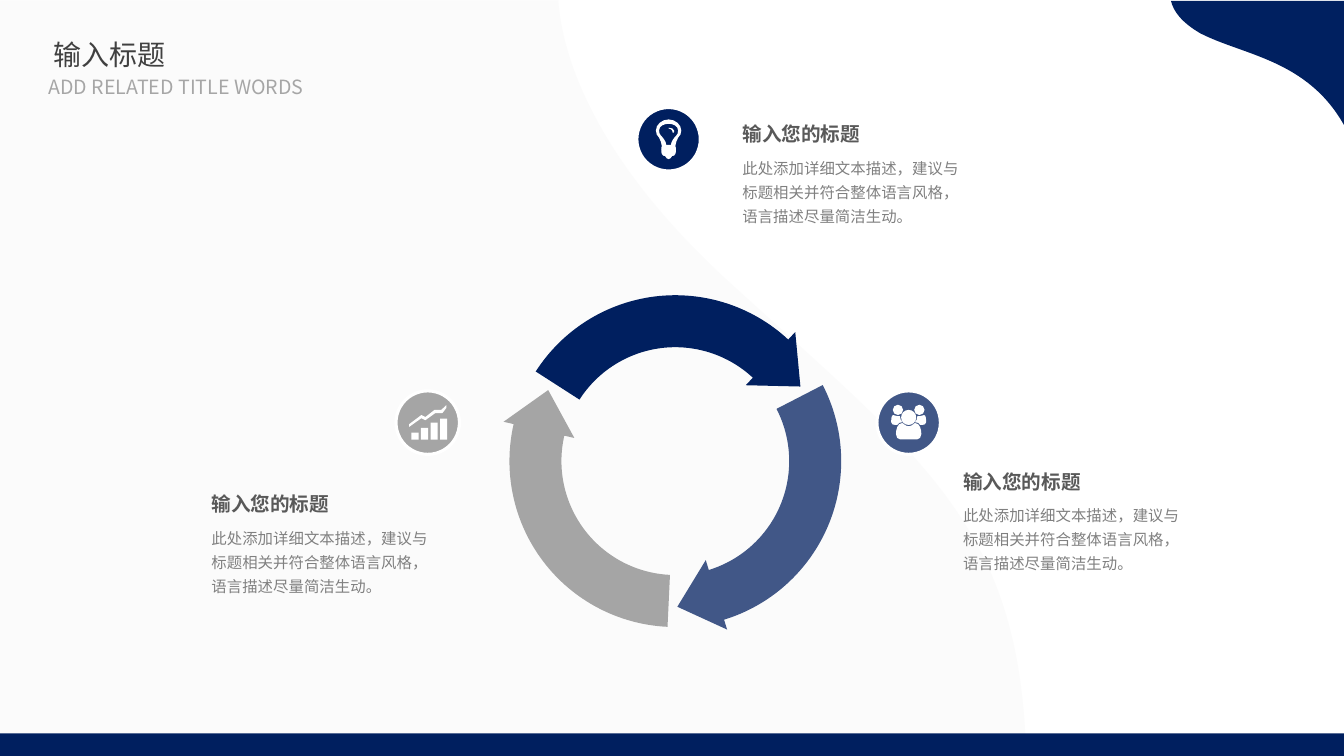
from math import cos, radians, sin, tan

from lxml import etree
from pptx import Presentation
from pptx.dml.color import RGBColor
from pptx.enum.shapes import MSO_SHAPE
from pptx.enum.text import MSO_AUTO_SIZE, PP_ALIGN
from pptx.oxml.ns import qn
from pptx.util import Cm, Pt

RECT, OVAL = MSO_SHAPE.RECTANGLE, MSO_SHAPE.OVAL
FIT, JUSTIFY, LEFT = MSO_AUTO_SIZE.SHAPE_TO_FIT_TEXT, PP_ALIGN.JUSTIFY, PP_ALIGN.LEFT

# Content (lengths in cm)
TITLE = "输入标题"
SUBTITLE = "ADD RELATED TITLE WORDS"
HEADING = "输入您的标题"
BODY = "此处添加详细文本描述，建议与标题相关并符合整体语言风格，语言描述尽量简洁生动。"
ITEMS = [
    {"color": "navy", "badge": (16.05, 2.71), "text": (18.46, 2.95)},
    {"color": "blue", "badge": (22.10, 9.85), "text": (24.02, 11.71)},
    {"color": "gray", "badge": (9.98, 9.85), "text": (5.08, 12.27)},
]

THEME = {
    "font": "Noto Sans CJK SC",
    "navy": "001F5F", "blue": "415787", "gray": "A5A5A5",
    "corner": "002060", "wave": "F2F2F2", "white": "FFFFFF",
    "title": {"size": 20, "color": "404040", "bold": False},
    "subtitle": {"size": 14, "color": "A6A6A6", "bold": False},
    "heading": {"size": 14, "color": "595959", "bold": True},
    "body": {"size": 11, "color": "808080", "bold": False},
}

# Geometry
W, H = 33.87, 19.05
RING = {"center": (17.02, 11.62), "outer": 4.18, "inner": 2.87,
        "barb_out": 4.44, "barb_in": 2.61, "tip": 3.67,
        "start": 212.7, "neck": 312.9, "end": 329.2}
BADGE = 1.6

# Curves: a start point, then two controls and an end point per segment
WAVE = [(25.86, 19.02), (25.70, 13.31), (23.32, 11.61), (18.52, 7.24),
        (14.76, 3.86), (14.15, 1.17), (14.07, 0.01)]
CORNER = [(29.51, 0.02), (29.57, 0.28), (29.77, 0.56), (30.25, 0.84),
          (31.34, 1.40), (32.94, 1.50), (W, 3.15)]
ICON_AXIS = 0.8
BULB_HALF = [(0.80, 0.30), (0.97, 0.30), (1.12, 0.43), (1.12, 0.58),
             (1.12, 0.66), (1.09, 0.71), (1.04, 0.76),
             (1.02, 0.81), (0.97, 0.89), (0.97, 0.97),
             (0.99, 0.99), (0.99, 1.14), (0.97, 1.17),
             (0.97, 1.22), (0.91, 1.22), (0.89, 1.22),
             (0.86, 1.27), (0.84, 1.30), (0.80, 1.30)]
GLASS_HALF = [(0.80, 0.41), (0.91, 0.41), (1.04, 0.46), (1.04, 0.58),
              (1.04, 0.64), (1.02, 0.69), (0.99, 0.71),
              (0.94, 0.76), (0.86, 0.86), (0.86, 0.94)]
GLINT = [(0.80, 0.53), (0.84, 0.53), (0.89, 0.56), (0.89, 0.58),
         (0.89, 0.61), (0.91, 0.64), (0.91, 0.64),
         (0.94, 0.64), (0.94, 0.61), (0.94, 0.58),
         (0.94, 0.53), (0.86, 0.51), (0.80, 0.51)]
SIDE_BODY = [(0.46, 0.86), (0.41, 0.86), (0.36, 0.84), (0.36, 0.79),
             (0.36, 0.74), (0.36, 0.61), (0.41, 0.61),
             (0.43, 0.61), (0.48, 0.64), (0.58, 0.64),
             (0.58, 0.71), (0.61, 0.76), (0.64, 0.79),
             (0.58, 0.79), (0.53, 0.81), (0.51, 0.86)]
BODY_HALF = [(0.80, 0.89), (0.71, 0.89), (0.66, 0.81), (0.64, 0.81),
             (0.51, 0.81), (0.48, 0.99), (0.48, 1.09),
             (0.48, 1.17), (0.53, 1.22), (0.58, 1.22)]
BARS = [0.18, 0.30, 0.43, 0.53]
TREND = [(1.14, 0.48), (0.97, 0.48), (0.74, 0.66), (0.64, 0.61), (0.33, 0.84),
         (0.33, 0.91), (0.64, 0.69), (0.74, 0.74), (0.99, 0.56), (1.17, 0.56),
         (1.27, 0.43), (1.27, 0.36)]

prs = Presentation()
prs.slide_width, prs.slide_height = Cm(W), Cm(H)
s = prs.slides.add_slide(prs.slide_layouts[6])


def rgb(name):
    return RGBColor.from_string(THEME.get(name, name))


def paint(sp, fill, line=None):
    sp.shadow.inherit = False
    sp.fill.solid()
    sp.fill.fore_color.rgb = rgb(fill)
    if line:
        sp.line.color.rgb = rgb(line)
        sp.line.width = Pt(2.25)
    else:
        sp.line.fill.background()
    return sp


def shape(kind, x, y, w, h, fill, line=None):
    sp = s.shapes.add_shape(kind, Cm(x), Cm(y), Cm(w), Cm(h))
    return paint(sp, fill, line)


def outline(contours, fill, origin=(0, 0), curved=True):
    placed = [[(Cm(x + origin[0]), Cm(y + origin[1])) for x, y in c] for c in contours]
    fb = s.shapes.build_freeform(*placed[0][0], scale=1.0)
    for i, points in enumerate(placed):
        if i:
            fb.move_to(*points[0])
        fb.add_line_segments(points[1:], close=True)
    sp = paint(fb.convert_to_shape(), fill)
    if curved:  # every three points become one cubic segment
        lines = list(sp._element.spPr.iter(qn("a:lnTo")))
        for i in range(0, len(lines), 3):
            bezier = etree.Element(qn("a:cubicBezTo"))
            lines[i].addprevious(bezier)
            for line in lines[i:i + 3]:
                bezier.append(line[0])
                line.getparent().remove(line)
    return sp


def straight(*points):
    return [p for p in points for _ in range(3)]


def arc(radius, first, last, pieces, center=(0, 0)):
    step = radians(last - first) / pieces
    k = 4 / 3 * tan(step / 4)
    nodes = []
    for i in range(pieces + 1):
        a = radians(first) + step * i
        for pull in (-k, 0, k):
            nodes.append((center[0] + radius * (cos(a) - pull * sin(a)),
                          center[1] + radius * (sin(a) + pull * cos(a))))
    return nodes[1:-1]


def flip(nodes):
    return [(2 * ICON_AXIS - x, y) for x, y in nodes]


def mirrored(half):
    half = half + straight((ICON_AXIS, half[-1][1]))
    return half + flip(half[::-1])[1:]


def ring_arrow(turn, fill):
    def at(radius, angle):
        a = radians(angle + turn)
        return radius * cos(a), radius * sin(a)

    ends = RING["start"] + turn, RING["neck"] + turn
    outer = arc(RING["outer"], *ends, 2)
    inner = arc(RING["inner"], *ends, 2)[::-1]
    head = straight(at(RING["barb_out"], RING["neck"]), at(RING["tip"], RING["end"]),
                    at(RING["barb_in"], RING["neck"]), inner[0])
    outline([outer + head + inner[1:]], fill, RING["center"])


def text(x, y, w, h, words, style, align=LEFT, spacing=1.0, wrap=True):
    tf = s.shapes.add_textbox(Cm(x), Cm(y), Cm(w), Cm(h)).text_frame
    tf.word_wrap, tf.auto_size = wrap, FIT
    p = tf.paragraphs[0]
    p.alignment, p.line_spacing = align, spacing
    r = p.add_run()
    r.text = words
    look = THEME[style]
    values = {"name": THEME["font"], "size": Pt(look["size"]), "bold": look["bold"]}
    for key, value in values.items():
        setattr(r.font, key, value)
    r.font.color.rgb = rgb(look["color"])
    etree.SubElement(r.font._element, qn("a:ea"), typeface=THEME["font"])


def bulb_icon(origin):
    outline([mirrored(BULB_HALF), mirrored(GLASS_HALF), GLINT], "white", origin)


def people_icon(origin):
    side_head = arc(0.13, 0, 360, 4, (0.53, 0.48))
    head = arc(0.19, 0, 360, 4, (ICON_AXIS, 0.67))
    outline([SIDE_BODY, side_head, mirrored(BODY_HALF), head,
             flip(side_head), flip(SIDE_BODY)], "white", origin)


def chart_icon(origin):
    for i, height in enumerate(BARS):
        shape(RECT, origin[0] + 0.39 + 0.24 * i, origin[1] + 1.23 - height,
              0.18, height, "white")
    outline([TREND], "white", origin, curved=False)


# Background
wave = outline([WAVE + straight((0, 0.01), (0, 19.02))], "wave")
color_el = wave._element.spPr.find(qn("a:solidFill"))[0]
etree.SubElement(color_el, qn("a:alpha"), val="29000")
outline([CORNER + straight((W, 0.02))], "corner")
shape(RECT, 0, 18.48, W, 0.57, "navy")

# Slide title
text(1.09, 0.82, 6.55, 1.12, TITLE, "title", JUSTIFY)
text(0.97, 1.77, 6.99, 0.86, SUBTITLE, "subtitle", wrap=False)

# Ring arrows, badges and their texts
for i, (item, icon) in enumerate(zip(ITEMS, (bulb_icon, people_icon, chart_icon))):
    ring_arrow(120 * i, item["color"])
    shape(OVAL, *item["badge"], BADGE, BADGE, item["color"], "white")
    icon(item["badge"])
    left, top = item["text"]
    text(left, top, 4.37, 0.86, HEADING, "heading")
    text(left, top + 0.79, 6.15, 2.03, BODY, "body", spacing=1.3)

prs.save("out.pptx")
